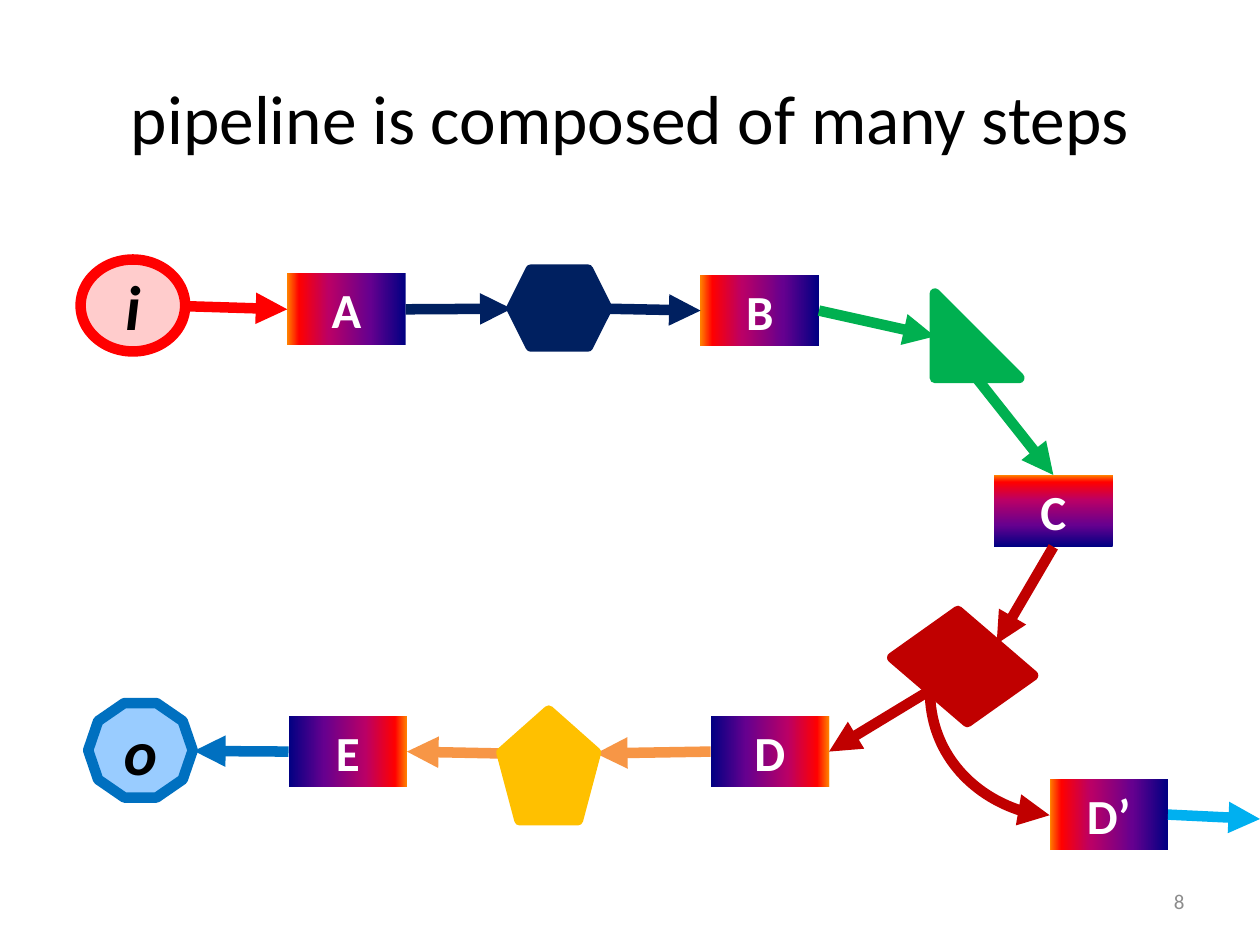
from dataclasses import dataclass

import lxml.etree
import pptx
import pptx.dml.color
import pptx.enum.shapes
import pptx.enum.text
import pptx.oxml
import pptx.oxml.ns
import pptx.util

Inches = pptx.util.Inches
Kind = pptx.enum.shapes.MSO_SHAPE
Link = pptx.enum.shapes.MSO_CONNECTOR
Align = pptx.enum.text.PP_ALIGN
qn = pptx.oxml.ns.qn
TOP, LEFT, BOTTOM, RIGHT = range(4)


@dataclass(frozen=True)
class Theme:
    font: str = "Calibri"
    title_size: float = 39.6
    terminal_size: float = 36
    step_size: float = 28
    number_size: float = 12
    line_width: float = 6
    black: str = "000000"
    white: str = "FFFFFF"
    grey: str = "8C8C8C"
    red: str = "FF0000"
    pink: str = "FFCCCC"
    navy: str = "002060"
    green: str = "00B050"
    crimson: str = "C00000"
    orange: str = "F79646"
    gold: str = "FFC000"
    blue: str = "0070C0"
    pale_blue: str = "99CCFF"
    sky: str = "00B0F0"
    gradient: tuple = ((0, "000082"), (30, "66008F"), (65, "BA0066"),
                       (90, "FF0000"), (100, "FF8200"))


THEME = Theme()


@dataclass(frozen=True)
class Box:
    left: float
    top: float
    width: float
    height: float

    def at(self, x, y):
        return self.left + x, self.top + y

    def inner(self, x, y, width, height):
        return Box(*self.at(x, y), width, height)

    def lengths(self):
        return [Inches(v) for v in (self.left, self.top, self.width, self.height)]


def rgb(color):
    return pptx.dml.color.RGBColor.from_string(color)


def write(shape, text, size, color=THEME.black, bold=False, italic=False,
          align=Align.CENTER):
    frame = shape.text_frame
    frame.word_wrap = True
    frame.vertical_anchor = pptx.enum.text.MSO_ANCHOR.MIDDLE
    paragraph = frame.paragraphs[0]
    paragraph.alignment = align
    run = paragraph.add_run()
    run.text = text
    font = run.font
    font.name, font.size = THEME.font, pptx.util.Pt(size)
    font.bold, font.italic = bold, italic
    font.color.rgb = rgb(color)


def add_figure(slide, kind, box, fill, line, text=None, rotation=0):
    """Solid shape with a heavy outline, used between the steps and at both ends."""
    figure = slide.shapes.add_shape(kind, *box.lengths())
    figure.shadow.inherit = False
    figure.rotation = rotation
    figure.fill.solid()
    figure.fill.fore_color.rgb = rgb(fill)
    figure.line.color.rgb = rgb(line)
    figure.line.width = pptx.util.Pt(THEME.line_width)
    if text:
        write(figure, text, THEME.terminal_size, bold=True, italic=True)
    return figure


def add_step(slide, corner, name, angle):
    """Lettered rectangle; angle is the clockwise direction of its gradient."""
    step = slide.shapes.add_shape(Kind.RECTANGLE, *Box(*corner, 0.94, 0.57).lengths())
    step.shadow.inherit = False
    step.line.fill.background()
    step.fill.gradient()
    gradient = step._element.spPr.find(qn("a:gradFill"))
    stops = gradient.find(qn("a:gsLst"))
    for stop in list(stops):
        stops.remove(stop)
    for position, color in THEME.gradient:
        stop = lxml.etree.SubElement(stops, qn("a:gs"), pos=str(position * 1000))
        lxml.etree.SubElement(stop, qn("a:srgbClr"), val=color)
    gradient.find(qn("a:lin")).set("ang", str(angle * 60000))
    write(step, name, THEME.step_size, THEME.white, bold=True)
    return step


def add_arrow(slide, start, end, color, kind=Link.STRAIGHT):
    """Each end is a point (x, y) or a pair (step, side) to be joined."""
    def is_point(spot):
        return isinstance(spot[0], (int, float))

    ends = [Inches(v) for spot in (start, end)
            for v in (spot if is_point(spot) else (0, 0))]
    arrow = slide.shapes.add_connector(kind, *ends)
    if not is_point(start):
        arrow.begin_connect(*start)
    if not is_point(end):
        arrow.end_connect(*end)
    arrow.line.color.rgb = rgb(color)
    arrow.line.width = pptx.util.Pt(THEME.line_width)
    properties = arrow._element.spPr
    lxml.etree.SubElement(properties.find(qn("a:ln")), qn("a:tailEnd"), type="triangle")
    lxml.etree.SubElement(properties, qn("a:effectLst"))
    return arrow


def add_title(slide, box):
    title = slide.shapes.title
    title.left, title.top, title.width, title.height = box.lengths()
    write(title, "pipeline is composed of many steps", THEME.title_size)


def add_forward_row(slide, box):
    """Input, A, hexagon, B."""
    a = add_step(slide, box.at(1.64, 0.11), "A", 180)
    b = add_step(slide, box.at(4.92, 0.12), "B", 180)
    add_arrow(slide, box.at(0.83, 0.37), (a, LEFT), THEME.red)
    add_arrow(slide, (a, RIGHT), box.at(3.42, 0.39), THEME.navy)
    add_arrow(slide, box.at(4.17, 0.39), (b, LEFT), THEME.navy)
    add_figure(slide, Kind.OVAL, box.inner(0, 0, 0.83, 0.73), THEME.pink, THEME.red, "i")
    add_figure(slide, Kind.HEXAGON, box.inner(3.42, 0.08, 0.76, 0.61),
               THEME.navy, THEME.navy)
    return b


def add_bend(slide, box, b):
    """Triangle, C, parallelogram; returns the point where the flow splits."""
    c = add_step(slide, box.at(0.72, 1.44), "C", 270)
    add_arrow(slide, (b, RIGHT), box.at(0.25, 0.34), THEME.green)
    add_arrow(slide, box.at(0.58, 0.67), (c, TOP), THEME.green)
    add_arrow(slide, (c, BOTTOM), box.at(0.74, 2.78), THEME.crimson)
    add_figure(slide, Kind.RIGHT_TRIANGLE, box.inner(0.25, 0, 0.67, 0.67),
               THEME.green, THEME.green)
    add_figure(slide, Kind.PARALLELOGRAM, box.inner(0, 2.65, 0.94, 0.62),
               THEME.crimson, THEME.crimson, rotation=40.6)
    return box.at(0.21, 3.15)


def add_return_row(slide, box, split):
    """D, pentagon, E, output, running right to left."""
    d = add_step(slide, box.at(4.94, 0.1), "D", 0)
    e = add_step(slide, box.at(1.59, 0.1), "E", 0)
    add_arrow(slide, split, (d, RIGHT), THEME.crimson)
    add_arrow(slide, (d, LEFT), box.at(4.03, 0.4), THEME.orange)
    add_arrow(slide, box.at(3.28, 0.4), (e, RIGHT), THEME.orange)
    add_arrow(slide, (e, LEFT), box.at(0.84, 0.38), THEME.blue)
    add_figure(slide, Kind.REGULAR_PENTAGON, box.inner(3.28, 0.06, 0.75, 0.87),
               THEME.gold, THEME.gold)
    add_figure(slide, Kind.DECAGON, box.inner(0, 0, 0.83, 0.75),
               THEME.pale_blue, THEME.blue, "o")


def add_branch(slide, box):
    """Curve to D’ and the arrow leading off to the right."""
    curve = add_arrow(slide, box.at(0.99, 0), box.at(0, 0.95), THEME.crimson, Link.CURVE)
    properties = curve._element.spPr
    properties.find(qn("a:prstGeom")).set("prst", "curvedConnector2")
    properties.find(qn("a:xfrm")).set("rot", str(270 * 60000))
    d_prime = add_step(slide, box.at(0.97, 0.68), "D’", 180)
    add_arrow(slide, (d_prime, RIGHT), box.at(box.width, 1), THEME.sky)


def add_number(slide, box):
    number = slide.shapes.add_textbox(*box.lengths())
    write(number, "8", THEME.number_size, THEME.grey, align=Align.RIGHT)


def main():
    deck = pptx.Presentation()
    deck.slide_width, deck.slide_height = Inches(10), Inches(7.5)
    slide = deck.slides.add_slide(deck.slide_layouts[5])
    add_title(slide, Box(0.5, 0.3, 9, 1.25))
    b = add_forward_row(slide, Box(0.64, 2.06, 5.86, 0.73))
    split = add_bend(slide, Box(7.17, 2.33, 1.66, 3.27), b)
    add_return_row(slide, Box(0.7, 5.58, 5.88, 0.93), split)
    add_branch(slide, Box(7.36, 5.5, 2.64, 1.25))
    add_number(slide, Box(7.17, 6.95, 2.33, 0.4))
    deck.save("out.pptx")


if __name__ == "__main__":
    main()
